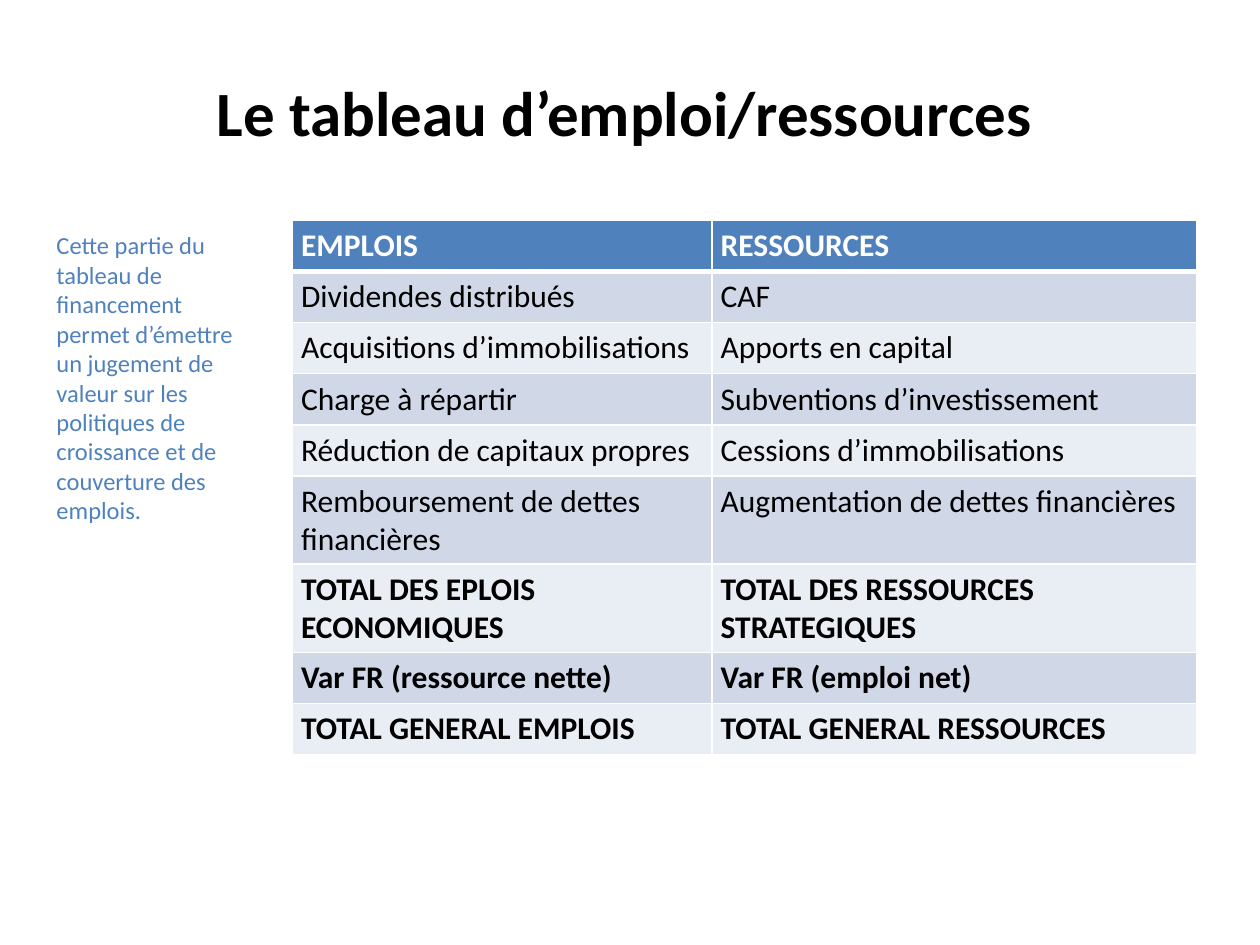
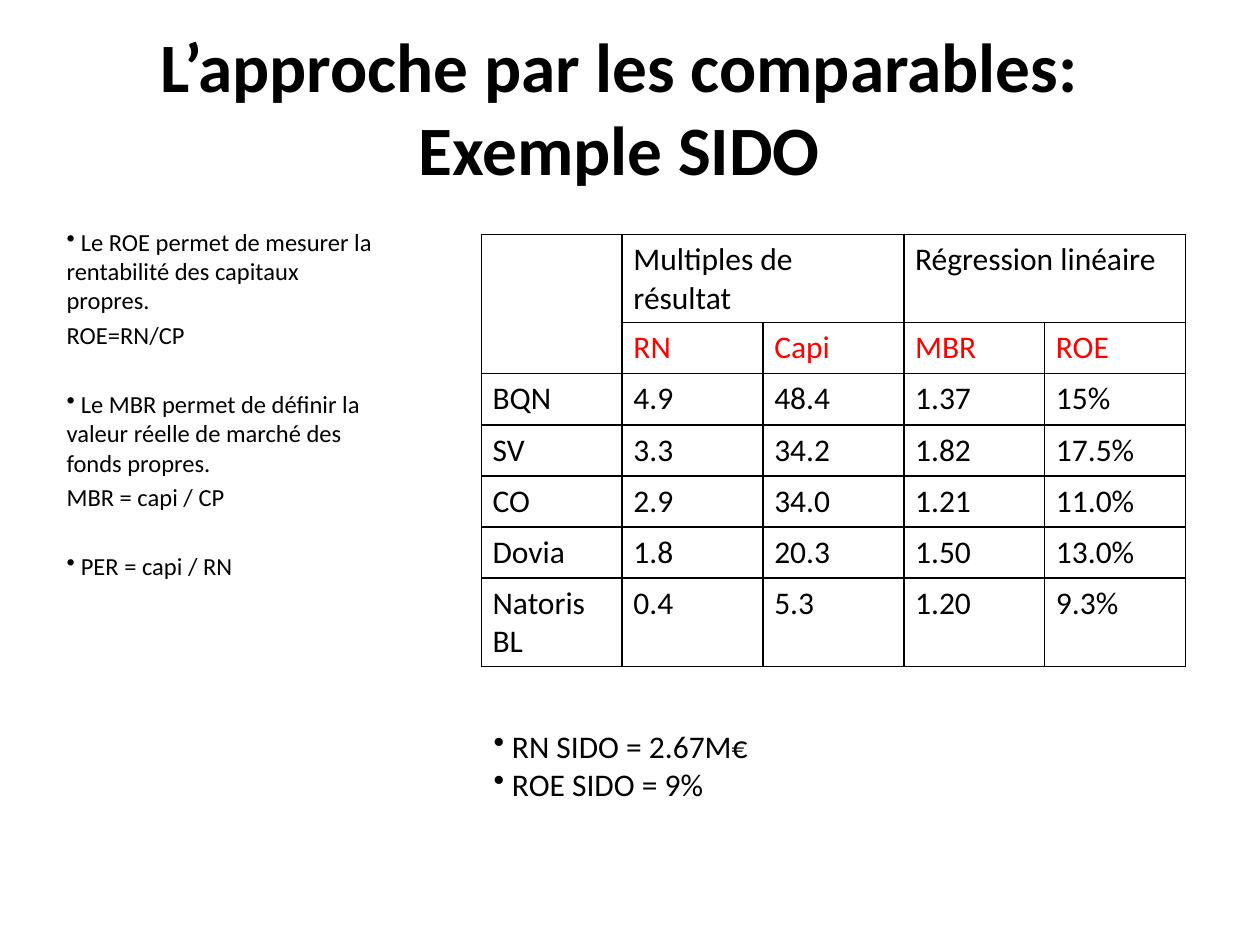
from lxml.etree import SubElement
from pptx import Presentation
from pptx.dml.color import RGBColor as Rgb
from pptx.enum.text import MSO_ANCHOR as Anchor, PP_ALIGN as Align
from pptx.oxml.ns import qn
from pptx.util import Inches, Pt

COLORS = {
    "ink": "000000",
    "paper": "FFFFFF",
    "accent": "4F81BD",
    "band_dark": "D0D8E8",
    "band_light": "E9EDF4",
    "key": "FF0000",
}
FONT = "Calibri"
TABLE_SIZE = 18
NOTE_SIZE = 14
ROW_HEIGHT = Pt(29.2)
PARAGRAPH_GAP = 2.8
SECTION_GAP = 22.7

deck = Presentation()
deck.slide_width, deck.slide_height = Inches(10), Inches(7.5)
# Places and sizes below are percentages of the slide's width and height
X, Y = deck.slide_width / 100, deck.slide_height / 100


def write(frame, text, size=TABLE_SIZE, color="ink", bold=False, align=Align.LEFT,
          before=0, bullet=False):
    """Fill the frame's empty first paragraph, or add one below the text."""
    paragraph = frame.paragraphs[-1]
    if paragraph.runs:
        paragraph = frame.add_paragraph()
    paragraph.alignment = align
    paragraph.space_before = Pt(before)
    if bullet:
        SubElement(paragraph._p.get_or_add_pPr(), qn("a:buChar"), char="•")
    run = paragraph.add_run()
    run.text = text
    run.font.name = FONT
    run.font.size = Pt(size)
    run.font.bold = bold
    run.font.color.rgb = Rgb.from_string(COLORS[color])


def add_grid(slide, left, top, column_widths, row_styles, rows, line, inset,
             header_rule=1):
    """Add a ruled table; a row style holds fill, text colour and bold."""
    frame = slide.shapes.add_table(
        len(rows), len(column_widths), int(left * X), int(top * Y),
        int(sum(column_widths) * X), ROW_HEIGHT * len(rows))
    grid = frame.table
    grid.first_row = grid.horz_banding = False
    for column, width in zip(grid.columns, column_widths):
        column.width = int(width * X)
    for r, (texts, (fill, color, bold)) in enumerate(zip(rows, row_styles)):
        grid.rows[r].height = ROW_HEIGHT
        for c, text in enumerate(texts):
            cell = grid.cell(r, c)
            cell.margin_left = cell.margin_right = Inches(inset)
            cell.margin_top = cell.margin_bottom = Inches(0.05)
            for side in "LRTB":
                under_header = (r, side) in ((0, "B"), (1, "T"))
                weight = header_rule if under_header else 1
                edge = SubElement(cell._tc.get_or_add_tcPr(), qn(f"a:ln{side}"),
                                  w=str(Pt(weight)))
                paint = SubElement(edge, qn("a:solidFill"))
                SubElement(paint, qn("a:srgbClr"), val=COLORS[line])
            if fill:
                cell.fill.solid()
                cell.fill.fore_color.rgb = Rgb.from_string(COLORS[fill])
            else:
                cell.fill.background()
            if text:
                write(cell.text_frame, text, color=color, bold=bold)
    return grid


blank = deck.slide_layouts[6]
funding, comparables = [deck.slides.add_slide(blank) for _ in range(2)]

# Titles
for slide, title, size, width, height in (
    (funding, "Le tableau d’emploi/ressources", 36, 89.1, 12.4),
    (comparables, "L’approche par les comparables: Exemple SIDO", 39.6, 88.3, 16.67),
):
    heading = slide.shapes.add_textbox(
        int(5 * X), int(4 * Y), int(width * X), int(height * Y)).text_frame
    heading.word_wrap = True
    heading.vertical_anchor = Anchor.BOTTOM
    write(heading, title, size=size, bold=True, align=Align.CENTER)

# Uses and resources
funding_rows = [
    ("EMPLOIS", "RESSOURCES"),
    ("Dividendes distribués", "CAF"),
    ("Acquisitions d’immobilisations", "Apports en capital"),
    ("Charge à répartir", "Subventions d’investissement"),
    ("Réduction de capitaux propres", "Cessions d’immobilisations"),
    ("Remboursement de dettes financières", "Augmentation de dettes financières"),
    ("TOTAL DES EPLOIS ECONOMIQUES", "TOTAL DES RESSOURCES STRATEGIQUES"),
    ("Var FR (ressource nette)", "Var FR (emploi net)"),
    ("TOTAL GENERAL EMPLOIS", "TOTAL GENERAL RESSOURCES"),
]
FIRST_TOTAL = 6
funding_styles = [("accent", "paper", True)] + [
    ("band_dark" if r % 2 else "band_light", "ink", r >= FIRST_TOTAL)
    for r in range(1, len(funding_rows))
]
add_grid(funding, 23.2, 23.33, (33.3, 38.5), funding_styles, funding_rows,
         line="paper", inset=0.07, header_rule=3)

# Market multiples
multiples_rows = [
    ("", "Multiples de résultat", "", "Régression linéaire", ""),
    ("", "RN", "Capi", "MBR", "ROE"),
    ("BQN", "4.9", "48.4", "1.37", "15%"),
    ("SV", "3.3", "34.2", "1.82", "17.5%"),
    ("CO", "2.9", "34.0", "1.21", "11.0%"),
    ("Dovia", "1.8", "20.3", "1.50", "13.0%"),
    ("Natoris BL", "0.4", "5.3", "1.20", "9.3%"),
]
multiples_styles = [(None, "key" if r == 1 else "ink", False)
                    for r in range(len(multiples_rows))]
multiples = add_grid(comparables, 38.2, 24.8, (11.18,) * 5, multiples_styles,
                     multiples_rows, line="ink", inset=0.09)
for first, last in (((0, 0), (1, 0)), ((0, 1), (0, 2)), ((0, 3), (0, 4))):
    multiples.cell(*first).merge(multiples.cell(*last))

# Notes beside and below the tables: text, then what differs from the note's format
bulleted = {"bullet": True}
section = {"bullet": True, "before": SECTION_GAP}
formula = {"before": PARAGRAPH_GAP}
notes = [
    (funding, (3.5, 23.73, 17.3, 48.27), {"size": NOTE_SIZE, "color": "accent"}, [
        ("Cette partie du tableau de financement permet d’émettre un jugement de "
         "valeur sur les politiques de croissance et de couverture des emplois.", {}),
    ]),
    (comparables, (4.3, 23.33, 26.5, 65.6), {"size": NOTE_SIZE}, [
        (" Le ROE permet de mesurer la rentabilité des capitaux propres.", bulleted),
        ("ROE=RN/CP", formula),
        (" Le MBR permet de définir la valeur réelle de marché des fonds propres.",
         section),
        ("MBR = capi / CP", formula),
        (" PER = capi / RN", section),
    ]),
    (comparables, (38.2, 76.27, 36.2, 9.47), {"size": TABLE_SIZE}, [
        (" RN SIDO = 2.67M€", bulleted),
        (" ROE SIDO = 9%", bulleted),
    ]),
]
for slide, (left, top, width, height), note_format, lines in notes:
    note = slide.shapes.add_textbox(
        int(left * X), int(top * Y), int(width * X), int(height * Y)).text_frame
    note.word_wrap = True
    for text, line_format in lines:
        write(note, text, **note_format, **line_format)

deck.save("out.pptx")
